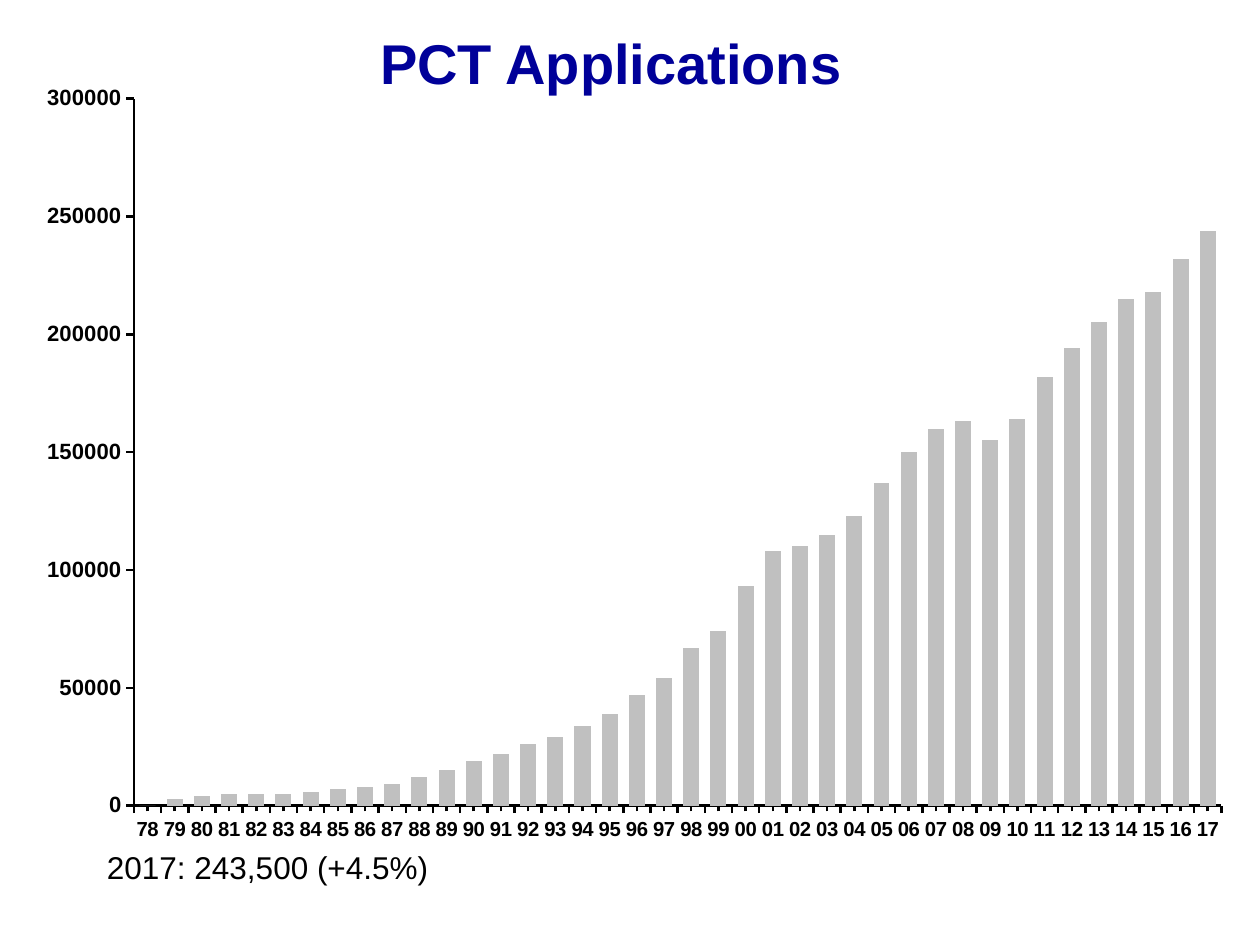
from lxml import etree
from pptx import Presentation
from pptx.chart.data import CategoryChartData as ChartData
from pptx.dml.color import RGBColor
from pptx.enum.chart import XL_CHART_TYPE as Kind, XL_TICK_LABEL_POSITION as Label, XL_TICK_MARK as Tick
from pptx.enum.text import MSO_ANCHOR as Anchor, PP_ALIGN as Align
from pptx.oxml import parse_xml
from pptx.oxml.ns import nsdecls, qn
from pptx.util import Inches, Pt

NAVY = RGBColor(0x00, 0x00, 0x99)
BLACK = RGBColor(0x00, 0x00, 0x00)
SILVER = RGBColor(0xC0, 0xC0, 0xC0)
FONT = "Arial"

START = 1978
THOUSANDS = [
    0, 3, 4, 5, 5, 5, 6, 7, 8, 9, 12, 15, 19, 22, 26, 29, 34, 39, 47, 54,
    67, 74, 93, 108, 110, 115, 123, 137, 150, 160,
    163, 155, 164, 182, 194, 205, 215, 218, 232, 244,
]


def set_font(font, size, color=BLACK, bold=False):
    font.name = FONT
    font.size = Pt(size)
    font.bold = bold
    font.color.rgb = color


def add_text(slide, box, text, size, color=BLACK, bold=False,
             align=Align.LEFT, anchor=Anchor.TOP):
    frame = slide.shapes.add_textbox(*map(Inches, box)).text_frame
    frame.word_wrap = True
    frame.vertical_anchor = anchor
    par = frame.paragraphs[0]
    par.alignment = align
    run = par.add_run()
    run.text = text
    set_font(run.font, size, color, bold)


def style_axis(axis, size):
    axis.has_major_gridlines = False
    axis.major_tick_mark = Tick.OUTSIDE
    axis.minor_tick_mark = Tick.NONE
    axis.format.line.color.rgb = BLACK
    axis.format.line.width = Pt(1.44)
    set_font(axis.tick_labels.font, size, bold=True)


def fix_plot(chart, x, y, w, h):
    """Pin the inner plot area, in fractions of the chart, and clear its back."""
    area = chart._chartSpace.chart.plotArea
    for old in area.findall(qn("c:layout")):
        area.remove(old)
    parts = "".join(f'<c:{tag} val="{val}"/>' for tag, val in [
        ("layoutTarget", "inner"), ("xMode", "edge"), ("yMode", "edge"),
        ("x", x), ("y", y), ("w", w), ("h", h)])
    area.insert(0, parse_xml(
        f'<c:layout {nsdecls("c")}><c:manualLayout>{parts}</c:manualLayout></c:layout>'))
    chart._chartSpace.chart.addnext(parse_xml(
        f'<c:spPr {nsdecls("c", "a")}><a:noFill/><a:ln><a:noFill/></a:ln></c:spPr>'))


def add_columns(slide, box):
    data = ChartData(number_format="General")
    data.categories = [f"{(START + i) % 100:02d}" for i in range(len(THOUSANDS))]
    data.add_series("Series 1", [n * 1000 for n in THOUSANDS])
    chart = slide.shapes.add_chart(
        Kind.COLUMN_CLUSTERED, *map(Inches, box), data).chart
    chart.has_legend = False
    chart.has_title = False
    set_font(chart.font, 24.6, bold=True)

    plot = chart.plots[0]
    plot.gap_width = 70
    plot.vary_by_categories = False
    fill = plot.series[0].format.fill
    fill.solid()
    fill.fore_color.rgb = SILVER

    years, counts = chart.category_axis, chart.value_axis
    style_axis(years, 11.6)
    years.minor_tick_mark = Tick.OUTSIDE
    years.tick_label_position = Label.LOW
    skip = etree.Element(qn("c:tickLblSkip"), val="1")
    years._element.find(qn("c:noMultiLvlLbl")).addprevious(skip)

    style_axis(counts, 12.6)
    counts.minimum_scale = 0
    counts.maximum_scale = 300000
    counts.major_unit = 50000
    fix_plot(chart, 0.09, 0.047, 0.9, 0.873)


def main():
    prs = Presentation()
    prs.slide_width, prs.slide_height = Inches(10), Inches(7.5)
    slide = prs.slides.add_slide(prs.slide_layouts[6])
    add_text(slide, (0.35, 0, 9, 0.99), "PCT Applications", 32, color=NAVY,
             bold=True, align=Align.CENTER, anchor=Anchor.MIDDLE)
    add_columns(slide, (0.2, 0.48, 9.59, 6.43))
    add_text(slide, (0.75, 6.68, 6.38, 0.4), "2017: 243,500 (+4.5%)", 18)
    prs.save("out.pptx")


if __name__ == "__main__":
    main()
